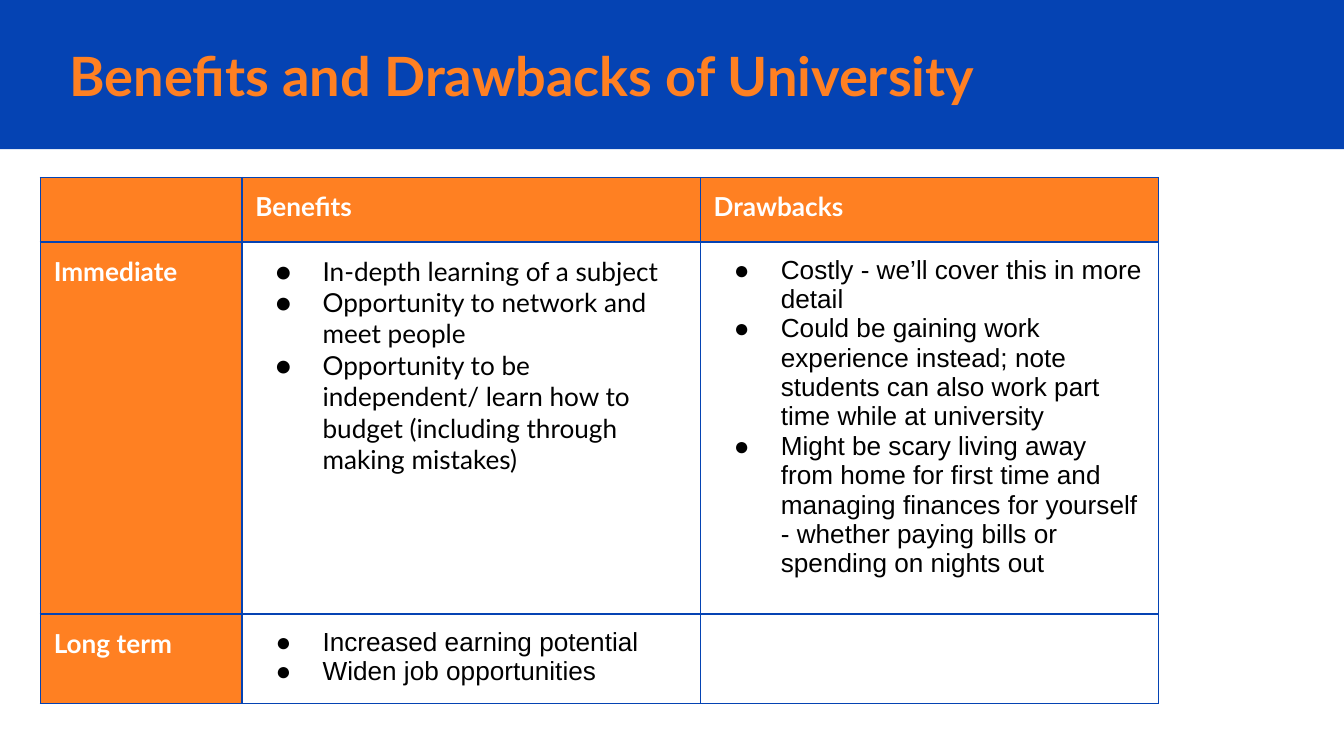
from dataclasses import dataclass

from lxml.etree import SubElement
from pptx import Presentation
from pptx.dml.color import RGBColor
from pptx.enum.shapes import MSO_SHAPE
from pptx.enum.text import MSO_ANCHOR
from pptx.oxml.ns import qn
from pptx.util import Inches, Pt

COLORS = {"blue": "0543B3", "orange": "FF8022", "white": "FFFFFF", "black": "000000"}
SLIDE_WIDTH = Inches(10)
SLIDE_HEIGHT = SLIDE_WIDTH * 9 // 16
MARGIN = Inches(0.1)
COLUMN_WIDTHS = (0.15, 0.341, 0.341)  # shares of the slide width
ROW_HEIGHTS = (Inches(0.48), Inches(0.42), Inches(0.42))  # rows grow with their text
BORDER_WIDTH = Pt(0.75)
TABLE_TEXT_SIZE = 14


@dataclass(frozen=True)
class CellContent:
    lines: tuple[str, ...] = ()
    font: str = "Lato"
    heading: bool = False


ROWS = (
    (
        CellContent(heading=True),
        CellContent(("Benefits",), heading=True),
        CellContent(("Drawbacks",), heading=True),
    ),
    (
        CellContent(("Immediate",), heading=True),
        CellContent((
            "In-depth learning of a subject",
            "Opportunity to network and meet people",
            "Opportunity to be independent/ learn how to budget "
            "(including through making mistakes)",
        )),
        CellContent((
            "Costly - we’ll cover this in more detail",
            "Could be gaining work experience instead; note students "
            "can also work part time while at university",
            "Might be scary living away from home for first time and managing finances "
            "for yourself - whether paying bills or spending on nights out",
        ), font="Arial"),
    ),
    (
        CellContent(("Long term",), heading=True),
        CellContent(("Increased earning potential", "Widen job opportunities"), font="Arial"),
        CellContent(),
    ),
)


def color(name: str) -> RGBColor:
    return RGBColor.from_string(COLORS[name])


def add_run(paragraph, text: str, font: str, size: float, color_name: str, bold: bool) -> None:
    run = paragraph.add_run()
    run.text = text
    run.font.name = font
    run.font.size = Pt(size)
    run.font.bold = bold
    run.font.color.rgb = color(color_name)


def add_bullet(paragraph, font: str) -> None:
    properties = paragraph._p.get_or_add_pPr()
    properties.set("marL", str(Inches(0.5)))
    properties.set("indent", str(-Inches(0.35)))
    bullet_color = SubElement(properties, qn("a:buClr"))
    SubElement(bullet_color, qn("a:srgbClr"), val=COLORS["black"])
    SubElement(properties, qn("a:buSzPts"), val=str(TABLE_TEXT_SIZE * 100))
    SubElement(properties, qn("a:buFont"), typeface=font)
    SubElement(properties, qn("a:buChar"), char="●")


def add_borders(cell) -> None:
    properties = cell._tc.get_or_add_tcPr()
    for side in ("lnL", "lnR", "lnT", "lnB"):
        line = SubElement(properties, qn(f"a:{side}"), w=str(BORDER_WIDTH))
        fill = SubElement(line, qn("a:solidFill"))
        SubElement(fill, qn("a:srgbClr"), val=COLORS["blue"])


def set_margins(target) -> None:
    target.margin_left = target.margin_right = MARGIN
    target.margin_top = target.margin_bottom = MARGIN


def fill_cell(cell, content: CellContent) -> None:
    add_borders(cell)
    if content.heading:
        cell.fill.solid()
        cell.fill.fore_color.rgb = color("orange")
    else:
        cell.fill.background()
    set_margins(cell)
    frame = cell.text_frame
    if not content.lines:
        # An empty cell needs its own text size, or it stretches its row.
        SubElement(frame.paragraphs[0]._p, qn("a:endParaRPr"), sz=str(TABLE_TEXT_SIZE * 100))
    text_color = "white" if content.heading else "black"
    for index, line in enumerate(content.lines):
        paragraph = frame.add_paragraph() if index else frame.paragraphs[0]
        if not content.heading:
            add_bullet(paragraph, content.font)
        add_run(paragraph, line, content.font, TABLE_TEXT_SIZE, text_color, content.heading)


def add_title(slide) -> None:
    band = slide.shapes.add_shape(MSO_SHAPE.RECTANGLE, 0, 0, SLIDE_WIDTH, Inches(1.11))
    band.shadow.inherit = False
    band.fill.solid()
    band.fill.fore_color.rgb = color("blue")
    band.line.fill.background()

    title = slide.shapes.add_textbox(Inches(0.42), Inches(0.28), Inches(8.46), Inches(0.56))
    frame = title.text_frame
    frame.word_wrap = True
    frame.vertical_anchor = MSO_ANCHOR.MIDDLE
    set_margins(frame)
    add_run(frame.paragraphs[0], "Benefits and Drawbacks of University",
            "Lato", 29, "orange", True)


def add_comparison_table(slide) -> None:
    widths = [int(SLIDE_WIDTH * share) for share in COLUMN_WIDTHS]
    table = slide.shapes.add_table(len(ROWS), len(widths), Inches(0.3), Inches(1.32),
                                   sum(widths), sum(ROW_HEIGHTS)).table
    table.first_row = False
    table.horz_banding = False
    for column, width in zip(table.columns, widths):
        column.width = width
    for row, height, contents in zip(table.rows, ROW_HEIGHTS, ROWS):
        row.height = height
        for cell, content in zip(row.cells, contents):
            fill_cell(cell, content)


def main() -> None:
    presentation = Presentation()
    presentation.slide_width = SLIDE_WIDTH
    presentation.slide_height = SLIDE_HEIGHT
    slide = presentation.slides.add_slide(presentation.slide_layouts[6])
    add_title(slide)
    add_comparison_table(slide)
    presentation.save("out.pptx")


if __name__ == "__main__":
    main()
